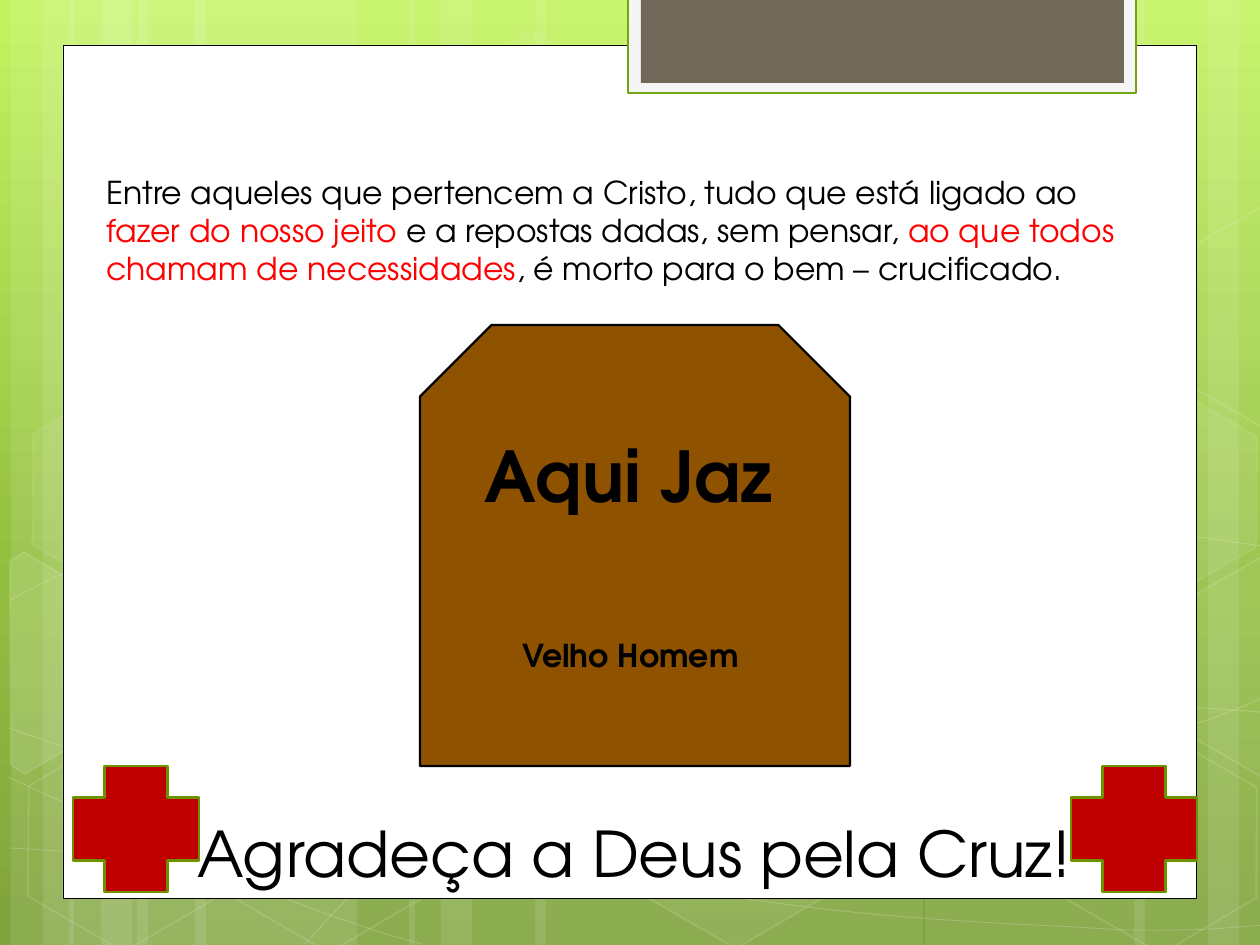
import copy
import math

import pptx
import pptx.dml.color
import pptx.enum.shapes
import pptx.enum.text
import pptx.oxml
import pptx.oxml.ns
import pptx.util

PX = 914400 // 126
FONT = "TeX Gyre Adventor"
SHAPE = pptx.enum.shapes.MSO_SHAPE
ALIGN = pptx.enum.text.PP_ALIGN
BLACK, WHITE, RED = "000000", "FFFFFF", "FF0000"
TILT = 30

BACKGROUND = [(0, "C2F35F"), (0.62, "92BE3F"), (1, "80A33D")]

# Stripe bands: left edge of each band, width of its widest stripe
BANDS = [(11, 220), (69, 220), (409, 388)]
RIGHT_STRIPES = [(925, 220), (1208, 63), (1134, 105)]

# Each curve is a start point followed by cubic triples; STRAIGHT ends a plain line
STRAIGHT = (1201, 708)
CURVES = [
    [(9, 848), (77, 852), (145, 856), (239, 854), (334, 853), (451, 850), (577, 838),
     (703, 825), (882, 801), (998, 777), (1113, 753), (1231, 716), (1269, 694)],
    [(9, 601), (45, 581), (82, 562), (152, 543), (224, 524), (326, 496), (437, 488),
     (549, 479), (685, 478), (824, 488), (963, 498), (1193, 537), (1269, 547)],
    [(8, 777), (160, 847), (311, 916), (422, 944)],
    [(9, 728), (48, 742), (88, 756), (161, 776), (234, 795), (344, 827), (450, 848),
     (554, 869), (687, 892), (791, 905), (896, 919), (1008, 924), (1075, 927),
     (1142, 932), (1158, 930), (1191, 930), (1223, 929), (1246, 926), (1269, 925)],
    [(305, 944), (328, 919), (350, 893), (381, 871), (411, 847), (454, 823), (489, 805),
     (524, 788), (546, 780), (591, 767), (638, 755), (722, 737), (766, 728),
     (811, 719), (818, 719), (857, 717), (896, 713), (958, 709), (1000, 708),
     (1045, 707), (1116, 708), (1116, 708), STRAIGHT, (1223, 709), (1246, 711),
     (1256, 712), (1268, 712), (1264, 712), (1268, 713)],
]

# left, top, fill opacity, line opacity
HEXAGONS = [(421, 45, 4, 8), (626, 742, 6, 12), (14, 745, None, 12), (18, 393, 7, 8),
            (219, 746, None, 12), (949, 571, 10, 12), (1051, 747, None, 12),
            (1051, 396, 7, 8)]
# Outline as it shows, centre of its tilted frame, fill opacity
LEFT_CUT = [(10, 561), (24, 552), (121, 609), (120, 718), (25, 774), (11, 765)]
RIGHT_CUT = [(1167, 611), (1263, 556), (1271, 562), (1271, 772), (1263, 777), (1167, 722)]
CUT_HEXAGONS = [(LEFT_CUT, (45, 675), 10), (RIGHT_CUT, (1241, 655), 4),
                ([(x, y - 350) for x, y in RIGHT_CUT], (1241, 305), None)]

# kind, box, fill, line colour, line width
PANELS = [
    (SHAPE.RECTANGLE, (63, 45, 1134, 854), WHITE, BLACK, 0.5),
    (SHAPE.RECTANGLE, (628, -2, 508, 95), "F5F5F5", "74A510", 1.25),
    (SHAPE.RECTANGLE, (641, -2, 483, 85), "71685A", None, 0),
]
TOMBSTONE = (SHAPE.SNIP_2_SAME_RECTANGLE, (420, 325, 430, 441), "8F5201", BLACK, 1.25)
CROSSES = [(SHAPE.CROSS, (x, 766, 126, 126), "C00000", "6D9200", 1.25) for x in (73, 1071)]

# box, size, bold, alignment, runs of (text, colour)
VERSE = ((94, 167, 1071, 126), 18, False, ALIGN.LEFT, [
    ("Entre aqueles que pertencem a Cristo, tudo que está ligado ao", BLACK),
    (" fazer do nosso jeito ", RED),
    ("e a repostas dadas, sem pensar, ", BLACK),
    ("ao que todos chamam de necessidades", RED),
    (", é morto para o bem – crucificado.", BLACK)])
EPITAPH = ((453, 426, 388, 97), 40, True, ALIGN.LEFT, [(" Aqui Jaz", BLACK)])
THANKS = ((94, 808, 1081, 88), 36, False, ALIGN.CENTER, [("Agradeça a Deus pela Cruz!", BLACK)])
NAME = ((453, 630, 355, 50), 18, True, ALIGN.CENTER, [("Velho Homem", BLACK)])


def rgb(value):
    """Turn a hex string into a colour."""
    return pptx.dml.color.RGBColor.from_string(value)


def paint(sp, fill, where, color, opacity):
    """Paint a fill at an opacity in percent, or clear it."""
    if color is None or opacity is None:
        fill.background()
        return
    fill.solid()
    fill.fore_color.rgb = rgb(color)
    if opacity < 100:
        sp.element.xpath(f"./p:spPr/{where}a:solidFill/a:srgbClr")[0].append(
            pptx.oxml.parse_xml(
                f'<a:alpha {pptx.oxml.ns.nsdecls("a")} val="{opacity * 1000}"/>'))


def style(sp, fill, fill_opacity, line, width, line_opacity=100):
    """Set fill and line, and drop the shadow."""
    sp.shadow.inherit = False
    paint(sp, sp.fill, "", fill, fill_opacity)
    paint(sp, sp.line.fill, "a:ln/", line, line_opacity)
    if line:
        sp.line.width = pptx.util.Pt(width)


def add_preset(s, kind, box, fill, line=None, width=0, fill_opacity=100, line_opacity=100):
    """Add a preset shape in pixels."""
    sp = s.shapes.add_shape(kind, *(v * PX for v in box))
    style(sp, fill, fill_opacity, line, width, line_opacity)
    return sp


def add_outline(s, points, close, fill_opacity, width, line_opacity):
    """Add a white translucent freeform through pixel points."""
    emu = [(round(x * PX), round(y * PX)) for x, y in points]
    builder = s.shapes.build_freeform(*emu[0])
    builder.add_line_segments(emu[1:], close=close)
    sp = builder.convert_to_shape()
    style(sp, WHITE, fill_opacity, WHITE, width, line_opacity)
    return sp


def add_curve(s, points):
    """Add an open outline and join its points in threes as cubic curves."""
    sp = add_outline(s, points, False, None, 0.5, 20)
    lines = sp.element.xpath(".//a:lnTo")
    i = 0
    while i < len(lines):
        if points[i + 1] == STRAIGHT:
            i += 1
            continue
        cubic = pptx.oxml.parse_xml(f'<a:cubicBezTo {pptx.oxml.ns.nsdecls("a")}/>')
        lines[i].addprevious(cubic)
        for line in lines[i:i + 3]:
            cubic.append(line[0])
            line.getparent().remove(line)
        i += 3


def turn(points, center, degrees):
    """Rotate points about a centre."""
    c, n = math.cos(math.radians(degrees)), math.sin(math.radians(degrees))
    cx, cy = center
    return [(cx + (x - cx) * c - (y - cy) * n, cy + (x - cx) * n + (y - cy) * c)
            for x, y in points]


def add_text(s, box, size, bold, align, runs):
    """Add a wrapped text box with coloured runs."""
    tf = s.shapes.add_textbox(*(v * PX for v in box)).text_frame
    tf.word_wrap = True
    tf.auto_size = pptx.enum.text.MSO_AUTO_SIZE.SHAPE_TO_FIT_TEXT
    p = tf.paragraphs[0]
    p.alignment = align
    for text, color in runs:
        r = p.add_run()
        r.text = text
        r.font.name, r.font.size, r.font.bold = FONT, pptx.util.Pt(size), bold
        r.font.color.rgb = rgb(color)


def set_background(s):
    """Give the slide its vertical green gradient."""
    fill = s.background.fill
    fill.gradient()
    fill.gradient_angle = 270
    stops = s.element.xpath(".//a:gsLst")[0]
    stops.append(copy.deepcopy(stops[-1]))
    for stop, (position, color) in zip(fill.gradient_stops, BACKGROUND):
        stop.position = position
        stop.color.rgb = rgb(color)


def add_backdrop(s):
    """Draw the translucent stripes, curves and hexagons."""
    stripes = [stripe for x, wide in BANDS
               for stripe in ((x + 126, wide), (x, 63), (x + 32, 105))]
    for x, w in stripes + RIGHT_STRIPES:
        add_preset(s, SHAPE.RECTANGLE, (x, 0, w, 945), WHITE, fill_opacity=10)
    for curve in CURVES:
        add_curve(s, curve)
    for x, y, fill_opacity, line_opacity in HEXAGONS:
        sp = add_preset(s, SHAPE.HEXAGON, (x, y, 220, 192), WHITE, WHITE, 1,
                        fill_opacity, line_opacity)
        sp.adjustments[0] = 0.285
        sp.rotation = TILT
    for points, center, fill_opacity in CUT_HEXAGONS:
        sp = add_outline(s, turn(points, center, -TILT), True, fill_opacity, 1, 12)
        sp.rotation = TILT


prs = pptx.Presentation()
prs.slide_width, prs.slide_height = 1260 * PX, 945 * PX
s = prs.slides.add_slide(prs.slide_layouts[6])
set_background(s)
add_backdrop(s)
for panel in PANELS:
    add_preset(s, *panel)
add_text(s, *VERSE)
add_preset(s, *TOMBSTONE)
add_text(s, *EPITAPH)
add_text(s, *THANKS)
for cross in CROSSES:
    add_preset(s, *cross)
add_text(s, *NAME)
prs.save("out.pptx")
